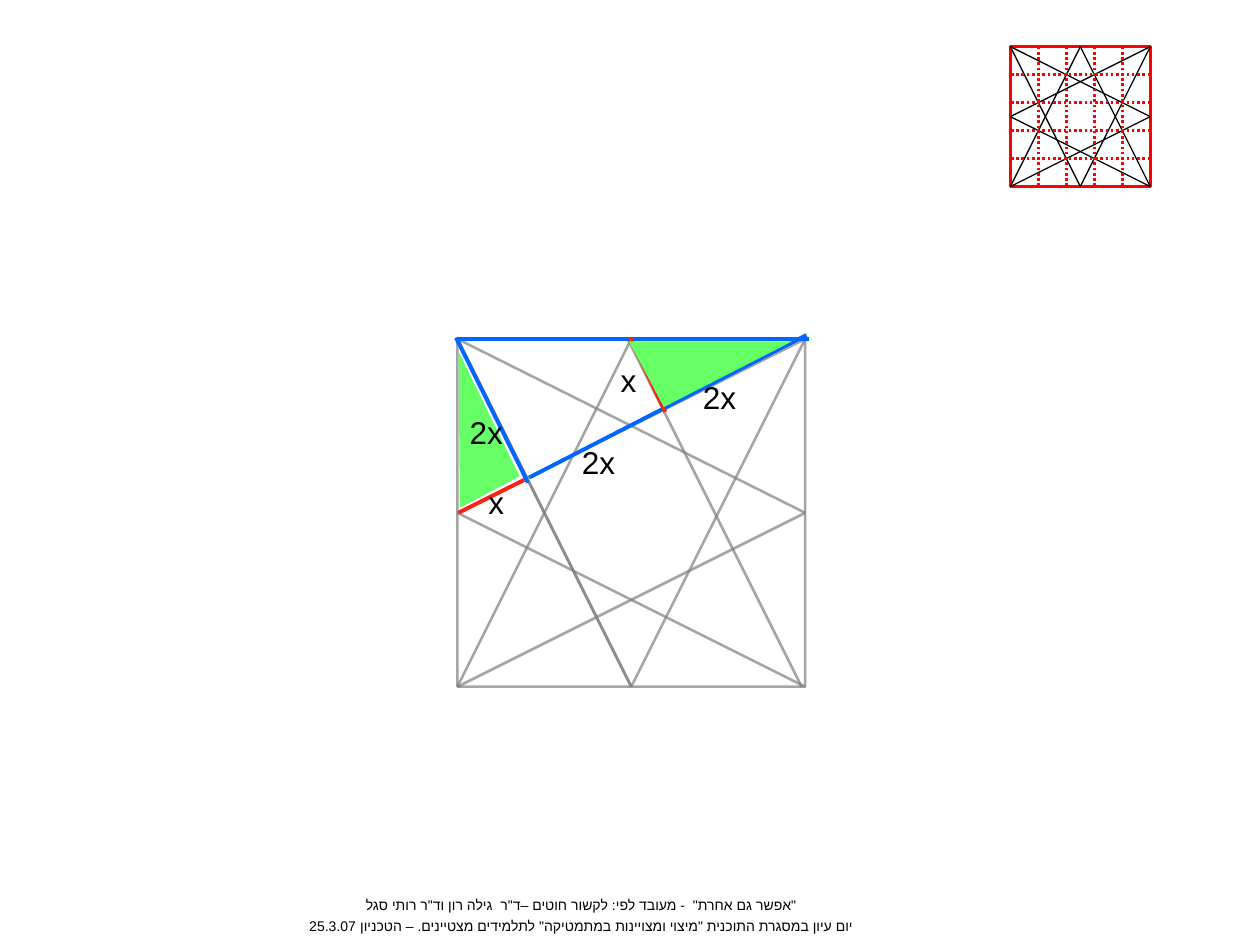
from dataclasses import dataclass

from pptx import Presentation
from pptx.dml.color import RGBColor
from pptx.enum.dml import MSO_LINE_DASH_STYLE as Dash
from pptx.enum.shapes import MSO_CONNECTOR as Connector, MSO_SHAPE as Shape
from pptx.enum.text import MSO_AUTO_SIZE as AutoSize, PP_ALIGN as Align
from pptx.oxml.ns import qn
from pptx.util import Pt
from lxml.etree import SubElement

BLUE, RED, GREEN = "0066FF", "FA2312", "66FF66"
Point = tuple[float, float]
Segment = tuple[Point, Point]


@dataclass(frozen=True)
class Pen:
    color: str
    width: float
    dash: Dash | None = None
    opacity: int = 100


@dataclass(frozen=True)
class Square:
    left: float
    top: float
    side: float

    def at(self, point: Point) -> Point:
        return self.left + point[0] * self.side, self.top + point[1] * self.side


@dataclass(frozen=True)
class Label:
    text: str
    left: float
    top: float
    width: float


def rgb(color: str) -> RGBColor:
    return RGBColor.from_string(color)


def apply_pen(line, pen: Pen) -> None:
    line.color.rgb = rgb(pen.color)
    line.width = Pt(pen.width)
    if pen.dash is not None:
        line.dash_style = pen.dash
    if pen.opacity < 100:
        color = line.fill._xPr.find(".//" + qn("a:srgbClr"))
        SubElement(color, qn("a:alpha"), val=str(pen.opacity * 1000))


def draw_line(shapes, start: Point, end: Point, pen: Pen):
    line = shapes.add_connector(Connector.STRAIGHT, *map(Pt, start + end))
    apply_pen(line.line, pen)
    SubElement(line._element.spPr, qn("a:effectLst"))
    return line


def draw_star(shapes, square: Square, segments: list[Segment], frame_pen: Pen, star_pen: Pen) -> None:
    frame = shapes.add_shape(Shape.RECTANGLE, *map(Pt, (square.left, square.top, square.side, square.side)))
    frame.shadow.inherit = False
    frame.fill.background()
    apply_pen(frame.line, frame_pen)
    for start, end in segments:
        line = draw_line(shapes, square.at(start), square.at(end), star_pen)
        if start in SIDE_MIDDLES:
            line.begin_connect(frame, SIDE_MIDDLES[start])
        if end in SIDE_MIDDLES:
            line.end_connect(frame, SIDE_MIDDLES[end])


def draw_triangle(shapes, corners: list[Point]) -> None:
    first, *rest = [(Pt(x), Pt(y)) for x, y in corners]
    builder = shapes.build_freeform(*first)
    builder.add_line_segments(rest, close=True)
    triangle = builder.convert_to_shape()
    triangle.shadow.inherit = False
    triangle.fill.solid()
    triangle.fill.fore_color.rgb = rgb(GREEN)
    triangle.line.fill.background()


def draw_text(shapes, label: Label, height: float, size: float, align: Align, gap: float = 0) -> None:
    box = shapes.add_textbox(*map(Pt, (label.left, label.top, label.width, height)))
    frame = box.text_frame
    frame.word_wrap = True
    frame.auto_size = AutoSize.SHAPE_TO_FIT_TEXT
    frame.text = label.text
    for index, paragraph in enumerate(frame.paragraphs):
        paragraph.alignment = align
        paragraph._p.get_or_add_pPr().set("rtl", "1")
        if index:
            paragraph.space_before = Pt(gap)
        for run in paragraph.runs:
            run.font.size = Pt(size)
            run.font.name = "Arial"
            run.font.color.rgb = rgb("000000")
            SubElement(run._r.get_or_add_rPr(), qn("a:cs"), typeface="Arial")


# Star segments as fractions of the square's side
SIDE_MIDDLES = {(0.5, 0): 0, (0, 0.5): 1, (0.5, 1): 2, (1, 0.5): 3}
STAR: list[Segment] = [
    ((0, 0), (1, 0.5)), ((0, 0.5), (1, 0)),
    ((0, 1), (1, 0.5)), ((0, 0.5), (1, 1)),
    ((0.5, 1), (1, 0)), ((0, 0), (0.5, 1)),
    ((0.5, 0), (0, 1)), ((0.5, 0), (1, 1)),
]
# The main star doubles one line and nudges the last one to the left
MAIN_STAR = STAR[:6] + STAR[5:7] + [((0.49, 0), (0.99, 1))]

MAIN = Square(261.4, 193.7, 198.7)
SMALL = Square(577.4, 26.7, 79.9)

HIGHLIGHTS = [
    ((261.4, 193.7), (462.2, 193.7), BLUE),
    ((260.6, 193), (301.7, 275.8), BLUE),
    ((302.4, 272.9), (460.8, 191.5), BLUE),
    ((360, 193), (380.2, 235.4), RED),
    ((262.1, 293), (299.5, 274.3), RED),
]
LEFT_TRIANGLE = [(262.8, 290.2), (262.1, 200.9), (296.9, 272.2)]
TOP_TRIANGLE = [(379.4, 232.6), (359.5, 195.1), (452.6, 195.1)]
LABELS = [
    Label("x", 269.3, 272.2, 25.9),
    Label("x", 344.9, 203, 25.9),
    Label("2x", 258.5, 232.6, 36),
    Label("2x", 322.6, 249.8, 36),
    Label("2x", 391.7, 212.4, 36),
]
CREDIT = Label(
    '"אפשר גם אחרת"  - מעובד לפי: לקשור חוטים –ד"ר  גילה רון וד"ר רותי סגל\n'
    'יום עיון במסגרת התוכנית "מיצוי ומצויינות במתמטיקה" לתלמידים מצטיינים. – הטכניון 25.3.07',
    67.7, 509, 529.2,
)


def main() -> None:
    deck = Presentation()
    deck.slide_width, deck.slide_height = Pt(720), Pt(540)
    shapes = deck.slides.add_slide(deck.slide_layouts[6]).shapes

    # Main star
    gray = Pen("808080", 1.5, opacity=70)
    draw_star(shapes.add_group_shape().shapes, MAIN, MAIN_STAR, gray, gray)

    # Highlighted sides and similar triangles
    for start, end, color in HIGHLIGHTS:
        draw_line(shapes, start, end, Pen(color, 2.25))
    for triangle in (LEFT_TRIANGLE, TOP_TRIANGLE):
        draw_triangle(shapes, triangle)
    for label in LABELS:
        draw_text(shapes, label, 28.8, 18, Align.RIGHT)

    # Small star on a grid of fifths
    small = shapes.add_group_shape().shapes
    draw_star(small, SMALL, STAR, Pen("FF0000", 1.5), Pen("000000", 0.75))
    dotted = Pen("FF0000", 1.5, Dash.ROUND_DOT)
    for step in range(1, 5):
        fifth = step / 5
        draw_line(small, SMALL.at((1, fifth)), SMALL.at((0, fifth)), dotted)
        draw_line(small, SMALL.at((fifth, 0)), SMALL.at((fifth, 1)), dotted)

    # Credit
    draw_text(shapes, CREDIT, 29.5, 8, Align.CENTER, gap=2.4)

    deck.save("out.pptx")


if __name__ == "__main__":
    main()
